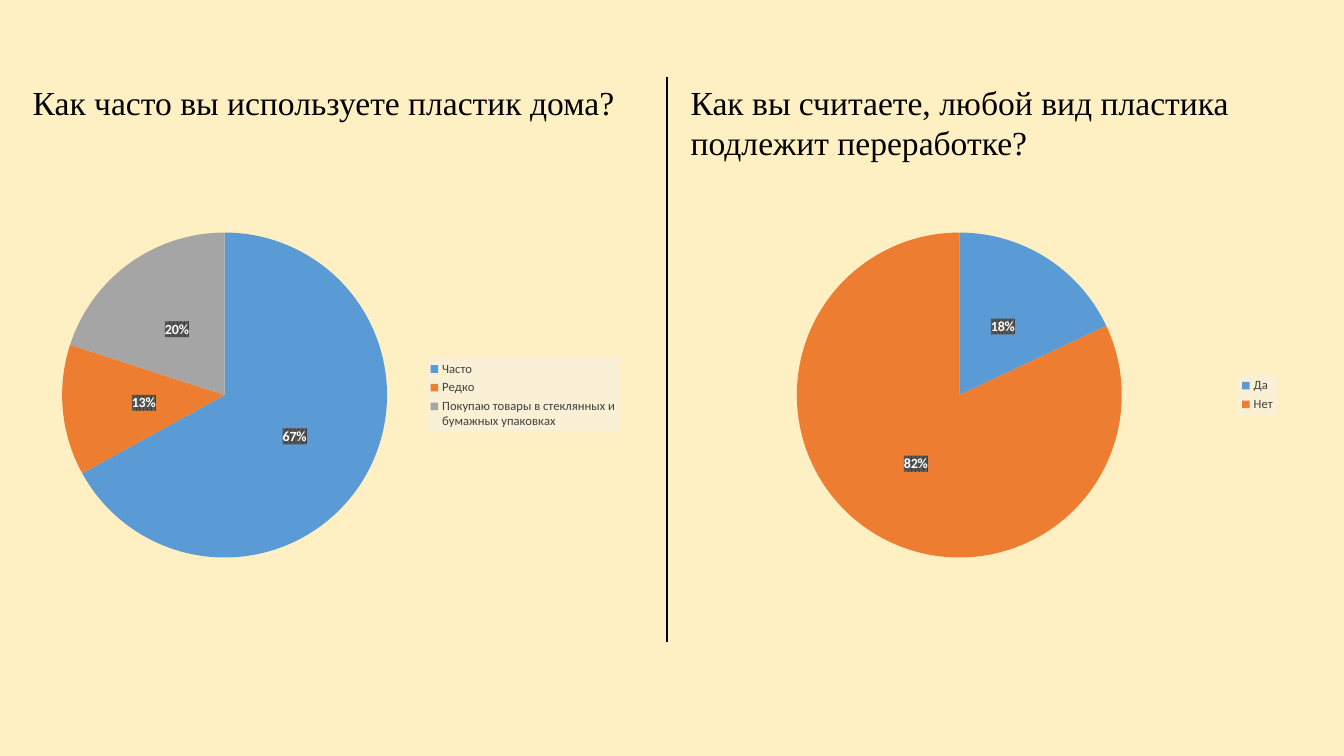
import pptx
import pptx.chart.data
import pptx.dml.color
import pptx.enum.chart
import pptx.enum.shapes
import pptx.enum.text
import pptx.oxml
import pptx.oxml.ns
import pptx.util

Cm = pptx.util.Cm
Pt = pptx.util.Pt

COLORS = {
    "background": "FFF0C4",
    "ink": "000000",
    "legend text": "404040",
    "legend fill": "F2F2F2",
    "label text": "FFFFFF",
    "label fill": "404040",
    "label dots": "595959",
    "slices": ["5B9BD5", "ED7D31", "A5A5A5"],
}
HEADING_FONT = {"name": "Times New Roman", "size": Pt(24), "bold": False}
CHART_FONT = {"name": "Calibri", "size": Pt(10)}
LEGEND_FONT = {"name": "Calibri", "size": Pt(9)}
LABEL_FONT = {"name": "Calibri", "size": Pt(10), "bold": True}

LEGEND_FILL = (
    f'<a:solidFill><a:srgbClr val="{COLORS["legend fill"]}">'
    '<a:alpha val="39000"/></a:srgbClr></a:solidFill>'
)
LABEL_FILL = (
    '<a:pattFill prst="pct75">'
    f'<a:fgClr><a:srgbClr val="{COLORS["label fill"]}"/></a:fgClr>'
    f'<a:bgClr><a:srgbClr val="{COLORS["label dots"]}"/></a:bgClr></a:pattFill>'
)

HEADING_TOP, CHART_TOP = Cm(1.93), Cm(5.51)
CHART_WIDTH, CHART_HEIGHT = Cm(15.24), Cm(8.89)
DIVIDER_X, DIVIDER_BOTTOM = Cm(16.81), Cm(16.18)
QUESTIONS = [
    {
        "heading": "Как часто вы используете пластик дома?",
        "left": Cm(0.57), "width": Cm(15.29), "height": Cm(1.27),
        "answers": {
            "Часто": 67,
            "Редко": 13,
            "Покупаю товары в стеклянных и бумажных упаковках": 20,
        },
    },
    {
        "heading": "Как вы считаете, любой вид пластика подлежит переработке?",
        "left": Cm(17.15), "width": Cm(16.94), "height": Cm(2.31),
        "answers": {"Да": 18, "Нет": 82},
    },
]


def rgb(value):
    return pptx.dml.color.RGBColor.from_string(value)


def format_font(font, values, color):
    for name, value in values.items():
        setattr(font, name, value)
    font.color.rgb = rgb(color)


def add_fill_after(element, fill):
    """Insert chart shape properties holding the fill after the element."""
    namespaces = pptx.oxml.ns.nsdecls("c", "a")
    element.addnext(pptx.oxml.parse_xml(f"<c:spPr {namespaces}>{fill}</c:spPr>"))


def write_heading(box, question):
    box.left, box.top = question["left"], HEADING_TOP
    box.width, box.height = question["width"], question["height"]
    frame = box.text_frame
    frame.word_wrap = True
    frame.vertical_anchor = pptx.enum.text.MSO_ANCHOR.TOP
    frame.auto_size = pptx.enum.text.MSO_AUTO_SIZE.SHAPE_TO_FIT_TEXT
    para = frame.paragraphs[0]
    para.space_before = Pt(0)
    span = para.add_run()
    span.text = question["heading"]
    format_font(span.font, HEADING_FONT, COLORS["ink"])


def add_pie(page, question):
    answers = question["answers"]
    data = pptx.chart.data.CategoryChartData()
    data.categories = list(answers)
    data.add_series("Series 1", list(answers.values()))
    chart = page.shapes.add_chart(
        pptx.enum.chart.XL_CHART_TYPE.PIE, question["left"], CHART_TOP,
        CHART_WIDTH, CHART_HEIGHT, data,
    ).chart
    chart.has_title = False
    format_font(chart.font, CHART_FONT, COLORS["ink"])

    plot = chart.plots[0]
    plot.vary_by_categories = True
    for index, color in zip(range(len(answers)), COLORS["slices"]):
        fill = plot.series[0].points[index].format.fill
        fill.solid()
        fill.fore_color.rgb = rgb(color)

    plot.has_data_labels = True
    labels = plot.data_labels
    settings = {
        "show_percentage": True,
        "show_value": False,
        "number_format": "0%",
        "number_format_is_linked": False,
        "position": pptx.enum.chart.XL_LABEL_POSITION.CENTER,
    }
    for name, value in settings.items():
        setattr(labels, name, value)
    format_font(labels.font, LABEL_FONT, COLORS["label text"])
    number_format = plot._element.find(".//" + pptx.oxml.ns.qn("c:numFmt"))
    add_fill_after(number_format, LABEL_FILL)

    chart.has_legend = True
    legend = chart.legend
    legend.position = pptx.enum.chart.XL_LEGEND_POSITION.RIGHT
    legend.include_in_layout = False
    format_font(legend.font, LEGEND_FONT, COLORS["legend text"])
    add_fill_after(legend._element.find(pptx.oxml.ns.qn("c:overlay")), LEGEND_FILL)


def add_divider(page):
    line = page.shapes.add_connector(
        pptx.enum.shapes.MSO_CONNECTOR.STRAIGHT,
        DIVIDER_X, HEADING_TOP, DIVIDER_X, DIVIDER_BOTTOM,
    )
    line.line.color.rgb = rgb(COLORS["ink"])
    line.line.width = Pt(1.5)
    effects = f'<a:effectLst {pptx.oxml.ns.nsdecls("a")}/>'
    line._element.spPr.append(pptx.oxml.parse_xml(effects))


def build_comparison(deck):
    page = deck.slides.add_slide(deck.slide_layouts.get_by_name("Comparison"))
    page.background.fill.solid()
    page.background.fill.fore_color.rgb = rgb(COLORS["background"])

    headings = []
    for holder in list(page.placeholders):
        if holder.placeholder_format.type == pptx.enum.shapes.PP_PLACEHOLDER.BODY:
            headings.append(holder)
        else:
            holder._element.getparent().remove(holder._element)

    for box, question in zip(headings, QUESTIONS):
        write_heading(box, question)
        add_pie(page, question)
    add_divider(page)


def main():
    deck = pptx.Presentation()
    deck.slide_width, deck.slide_height = Cm(33.87), Cm(19.05)
    build_comparison(deck)
    deck.save("out.pptx")


if __name__ == "__main__":
    main()
